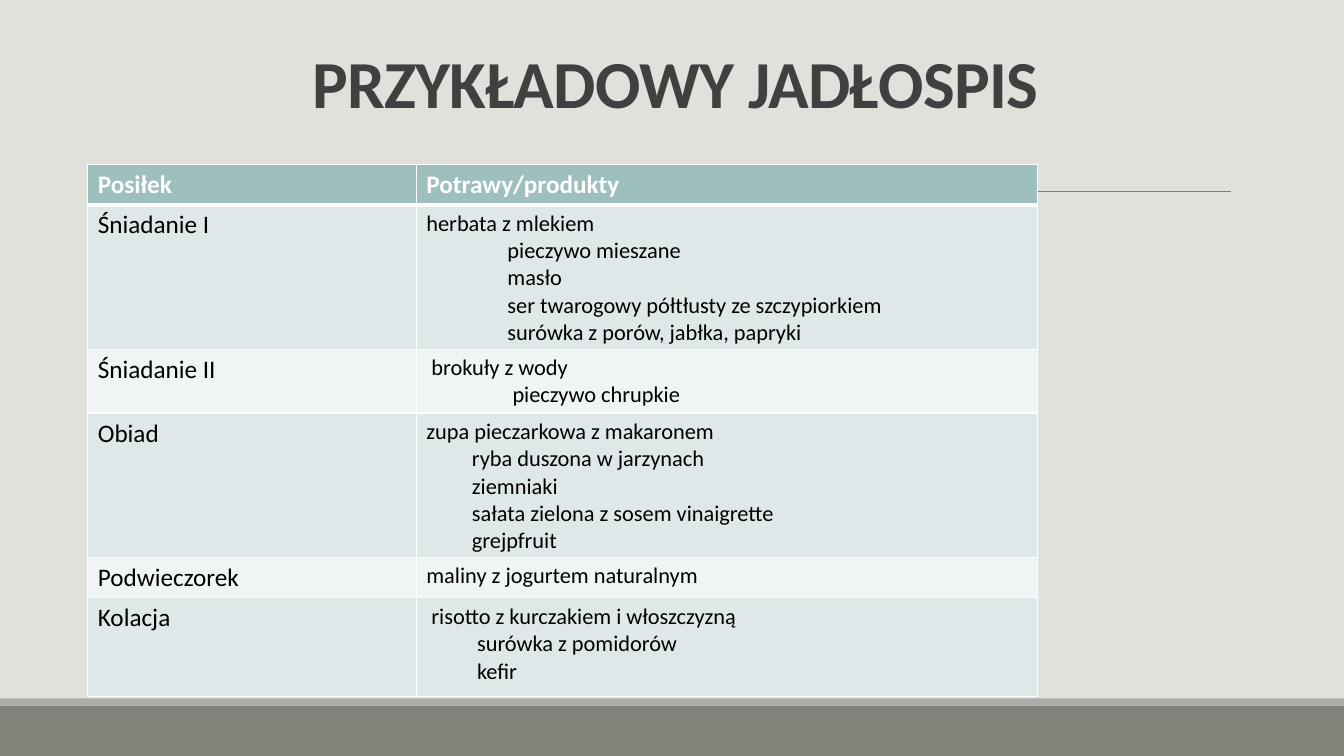
"""Build a one-slide sample menu with a table of meals and dishes."""
from dataclasses import dataclass

from lxml import etree
from pptx import Presentation
from pptx.dml.color import RGBColor
from pptx.enum import shapes, text
from pptx.oxml import ns
from pptx.util import Pt


@dataclass(frozen=True)
class Theme:
    """Colours, font and type sizes."""
    font: str = "Calibri"
    background: str = "E1E1DB"
    footer: str = "82847C"
    footer_edge: str = "ACADA8"
    rule: str = "808080"
    title: str = "404040"
    header: str = "9DBFBE"
    bands: tuple[str, str] = ("DFE8E8", "EFF4F4")
    white: str = "FFFFFF"
    black: str = "000000"
    title_size: float = 48
    meal_size: float = 18
    dish_size: float = 16


@dataclass(frozen=True)
class Bar:
    """A full-width strip at the foot of the slide."""
    top: float
    height: float
    color: str


@dataclass(frozen=True)
class Meal:
    """A table row: first dish at the lead indent, the rest at the indent."""
    name: str
    dishes: tuple[str, ...]
    height: float
    lead: float = 0
    indent: float = 0


THEME = Theme()
WIDTH, HEIGHT = 960, 540
TABLE_LEFT, TABLE_TOP = 62.7, 117.4
COLUMNS = (234.7, 443.5)
HEADER_HEIGHT = 27.4
BARS = (Bar(504, 36, THEME.footer), Bar(498.8, 5.2, THEME.footer_edge))
MEALS = (
    Meal("Śniadanie I",
         ("herbata z mlekiem", "pieczywo mieszane", "masło",
          "ser twarogowy półtłusty ze szczypiorkiem",
          "surówka z porów, jabłka, papryki"), 98.6, indent=57.9),
    Meal("Śniadanie II", ("brokuły z wody", "pieczywo chrupkie"),
         43.9, lead=3.6, indent=61.5),
    Meal("Obiad",
         ("zupa pieczarkowa z makaronem", "ryba duszona w jarzynach",
          "ziemniaki", "sałata zielona z sosem vinaigrette",
          "grejpfruit"), 98.6, indent=32.5),
    Meal("Podwieczorek", ("maliny z jogurtem naturalnym",), 27.4),
    Meal("Kolacja",
         ("risotto z kurczakiem i włoszczyzną", "surówka z pomidorów",
          "kefir"), 70.6, lead=3.6, indent=36.2),
)


def rgb(color: str) -> RGBColor:
    """Turn a hex string into a colour."""
    return RGBColor.from_string(color)


def style(p, size: float, color: str, bold: bool = False) -> None:
    """Set the font of a paragraph."""
    font = p.font
    font.name, font.size, font.bold = THEME.font, Pt(size), bold
    font.color.rgb = rgb(color)


def add_bar(slide, bar: Bar) -> None:
    """Draw a foot strip."""
    sp = slide.shapes.add_shape(shapes.MSO_SHAPE.RECTANGLE, 0, Pt(bar.top),
                                Pt(WIDTH), Pt(bar.height))
    sp.shadow.inherit = False
    sp.fill.solid()
    sp.fill.fore_color.rgb = rgb(bar.color)
    sp.line.fill.background()


def add_rule(slide, left: float, right: float, y: float) -> None:
    """Draw the thin horizontal rule."""
    line = slide.shapes.add_connector(shapes.MSO_CONNECTOR.STRAIGHT,
                                      Pt(left), Pt(y), Pt(right), Pt(y))
    line.line.color.rgb = rgb(THEME.rule)
    line.line.width = Pt(0.5)
    etree.SubElement(line._element.spPr, ns.qn("a:effectLst"))


def add_title(slide, title: str) -> None:
    """Add the centred heading."""
    sp = slide.shapes.add_textbox(Pt(86.4), Pt(22.3), Pt(792), Pt(68.4))
    tf = sp.text_frame
    tf.word_wrap = True
    tf.vertical_anchor = text.MSO_ANCHOR.BOTTOM
    p = tf.paragraphs[0]
    p.alignment = text.PP_ALIGN.CENTER
    p.line_spacing = 0.85
    style(p, THEME.title_size, THEME.title, bold=True)
    r = p.add_run()
    r.text = title
    r.font._element.set("spc", "-50")


def add_borders(cell, top: float, bottom: float) -> None:
    """Give a cell white borders of the given top and bottom widths."""
    tc_pr = cell._tc.get_or_add_tcPr()
    for side, width in (("L", 1), ("R", 1), ("T", top), ("B", bottom)):
        ln = etree.SubElement(tc_pr, ns.qn(f"a:ln{side}"), w=str(Pt(width)))
        fill = etree.SubElement(ln, ns.qn("a:solidFill"))
        etree.SubElement(fill, ns.qn("a:srgbClr"), val=THEME.white)


def fill_cell(cell, lines: tuple[str, ...], fill: str, size: float, color: str,
              bold: bool = False, lead: float = 0, indent: float = 0,
              top: float = 1, bottom: float = 1) -> None:
    """Write indented lines into a cell and style it."""
    add_borders(cell, top, bottom)
    cell.fill.solid()
    cell.fill.fore_color.rgb = rgb(fill)
    tf = cell.text_frame
    tf.text = "\n".join(lines)
    for i, p in enumerate(tf.paragraphs):
        style(p, size, color, bold)
        margin = indent if i else lead
        p._p.get_or_add_pPr().set("marL", str(Pt(margin)))


def add_menu(slide, headings: tuple[str, str], meals: tuple[Meal, ...]) -> None:
    """Add the table of meals."""
    heights = (HEADER_HEIGHT, *(meal.height for meal in meals))
    table = slide.shapes.add_table(len(heights), len(COLUMNS), Pt(TABLE_LEFT),
                                   Pt(TABLE_TOP), Pt(sum(COLUMNS)),
                                   Pt(sum(heights))).table
    for column, width in zip(table.columns, COLUMNS):
        column.width = Pt(width)
    for row, height in zip(table.rows, heights):
        row.height = Pt(height)
    for col, heading in enumerate(headings):
        fill_cell(table.cell(0, col), (heading,), THEME.header,
                  THEME.meal_size, THEME.white, bold=True, bottom=3)
    for row, meal in enumerate(meals, start=1):
        band = THEME.bands[(row - 1) % 2]
        top = 3 if row == 1 else 1
        fill_cell(table.cell(row, 0), (meal.name,), band, THEME.meal_size,
                  THEME.black, top=top)
        fill_cell(table.cell(row, 1), meal.dishes, band, THEME.dish_size,
                  THEME.black, lead=meal.lead, indent=meal.indent, top=top)


def main() -> None:
    """Build and save the presentation."""
    prs = Presentation()
    prs.slide_width, prs.slide_height = Pt(WIDTH), Pt(HEIGHT)
    slide = prs.slides.add_slide(prs.slide_layouts[6])
    slide.background.fill.solid()
    slide.background.fill.fore_color.rgb = rgb(THEME.background)
    for bar in BARS:
        add_bar(slide, bar)
    add_rule(slide, 94.3, 879.1, 136.8)
    add_title(slide, "PRZYKŁADOWY JADŁOSPIS")
    add_menu(slide, ("Posiłek", "Potrawy/produkty"), MEALS)
    prs.save("out.pptx")


if __name__ == "__main__":
    main()
